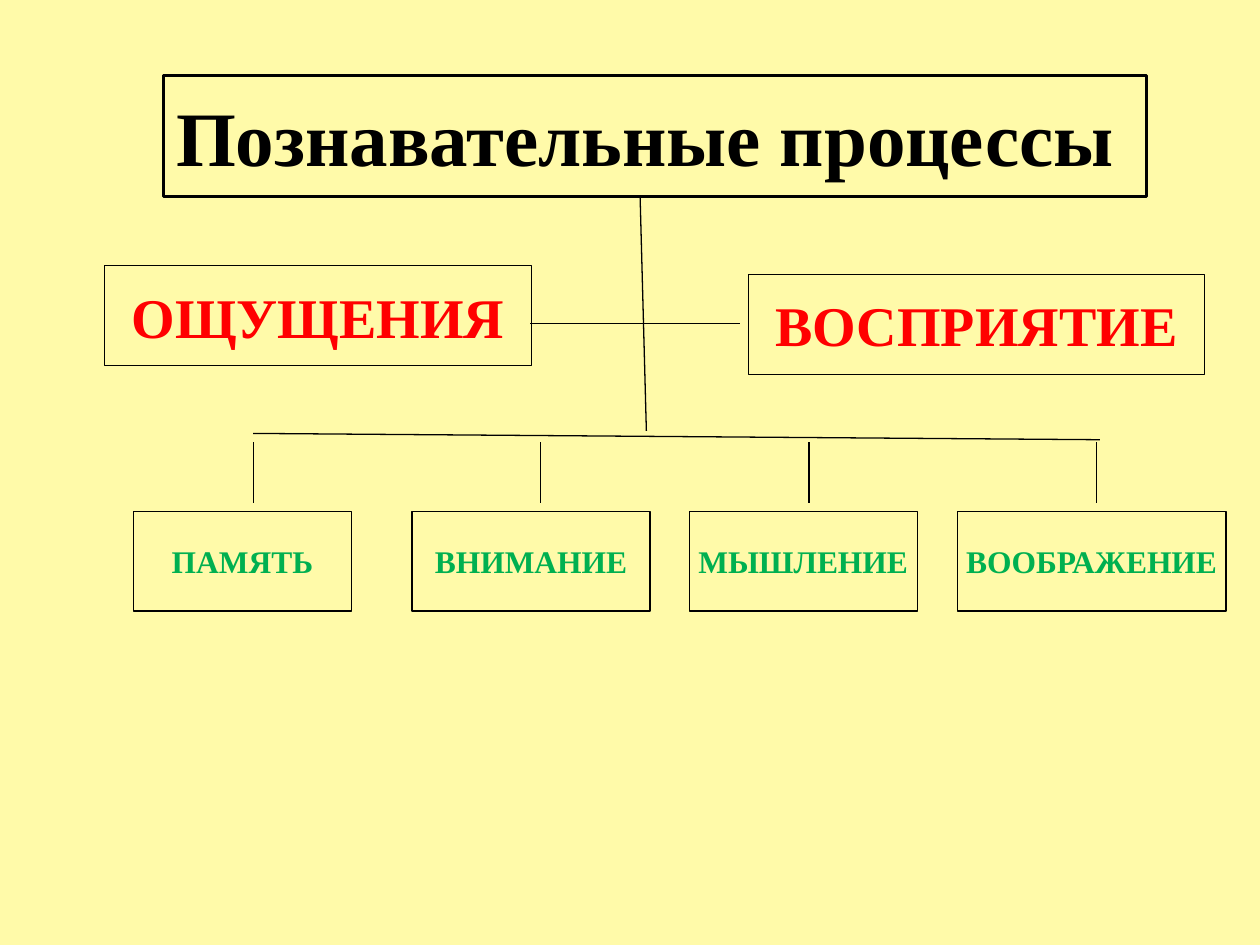
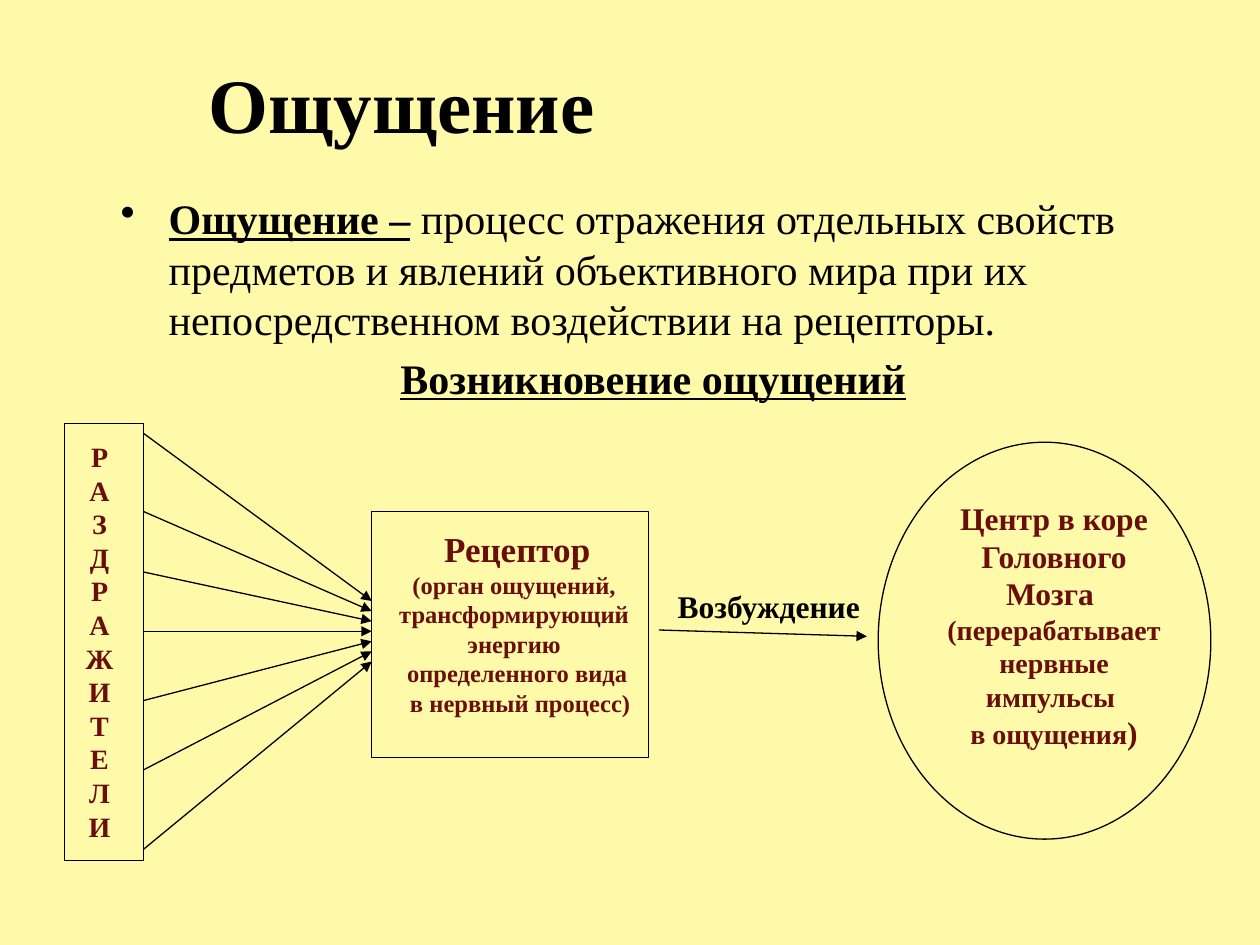
"""Builds two slides on cognitive processes and on how sensation arises."""
from lxml import etree
from pptx import Presentation
from pptx.dml.color import RGBColor
from pptx.enum.shapes import MSO_CONNECTOR, MSO_SHAPE
from pptx.enum.text import MSO_ANCHOR, PP_ALIGN
from pptx.oxml.ns import qn
from pptx.util import Inches, Pt

RECT, OVAL = MSO_SHAPE.RECTANGLE, MSO_SHAPE.OVAL
STRAIGHT = MSO_CONNECTOR.STRAIGHT
TOP, MIDDLE = MSO_ANCHOR.TOP, MSO_ANCHOR.MIDDLE
LEFT, CENTER = PP_ALIGN.LEFT, PP_ALIGN.CENTER

CREAM = RGBColor(0xFF, 0xFA, 0xA9)
BLACK = RGBColor(0, 0, 0)
RED = RGBColor(0xFF, 0, 0)
GREEN = RGBColor(0, 0xB0, 0x50)
MAROON = RGBColor(0x6A, 0x0E, 0x0C)
FONT = "Times New Roman"
THIN = 0.75
TITLE_SIZE = 44

OVERVIEW = "Познавательные процессы"
BOX_H = 0.79
SENSING = [("ОЩУЩЕНИЯ", 0.83, 2.11, 3.39), ("ВОСПРИЯТИЕ", 5.94, 2.18, 3.62)]
BRANCH_Y, STEM_Y, STEM_H = 4.06, 3.51, 0.48
BRANCHES = [
    ("ПАМЯТЬ", 1.06, 1.73, 2.01),
    ("ВНИМАНИЕ", 3.27, 1.89, 4.29),
    ("МЫШЛЕНИЕ", 5.47, 1.81, 6.42),
    ("ВООБРАЖЕНИЕ", 7.6, 2.13, 8.7),
]
TREE_LINES = [
    ((2.01, 3.44), (8.73, 3.49)),
    ((5.08, 1.55), (5.13, 3.42)),
    ((4.21, 2.57), (5.87, 2.57)),
]

SENSATION = "Ощущение"
TERM = "Ощущение –"
DEFINITION = (" процесс отражения отдельных свойств предметов и явлений "
              "объективного мира при их непосредственном воздействии на рецепторы.")
ORIGIN = "Возникновение ощущений"
STIMULI = "РАЗДРАЖИТЕЛИ"
STIMULUS_YS = [3.44, 4.06, 4.54, 5.01, 5.56, 6.11, 6.74]
STIMULUS_X, RECEPTOR_X = 1.14, 2.95
RECEPTOR_Y, RECEPTOR_STEP = 4.77, 0.08
RECEPTOR = [
    [("Рецептор", 20)],
    [("(орган ощущений, ", 14)],
    [("трансформирующий ", 14)],
    [("энергию ", 14)],
    [("определенного вида", 14)],
    [(" в нервный процесс)", 14)],
]
EXCITATION = "Возбуждение"
CORTEX = [
    [("Центр в коре", 18)],
    [("Головного", 18)],
    [("Мозга ", 18)],
    [("(перерабатывает", 16)],
    [("нервные", 16)],
    [("импульсы ", 16)],
    [("в ощущения", 16), (")", 18)],
]


def add_run(p, text, size, color=BLACK, bold=True, underline=False):
    r = p.add_run()
    r.text = text
    r.font.name, r.font.size = FONT, Pt(size)
    r.font.bold, r.font.underline = bold, underline
    r.font.color.rgb = color


def write(sp, paragraphs, color=BLACK, align=CENTER, anchor=TOP, wrap=True):
    tf = sp.text_frame
    tf.word_wrap, tf.vertical_anchor = wrap, anchor
    for i, runs in enumerate(paragraphs):
        p = tf.add_paragraph() if i else tf.paragraphs[0]
        p.alignment = align
        for text, size in runs:
            add_run(p, text, size, color)


def add_text(s, box, paragraphs, **style):
    write(s.shapes.add_textbox(*map(Inches, box)), paragraphs, **style)


def add_box(s, box, shape=RECT, line=THIN):
    sp = s.shapes.add_shape(shape, *map(Inches, box))
    sp.shadow.inherit = False
    sp.fill.solid()
    sp.fill.fore_color.rgb = CREAM
    if line:
        sp.line.color.rgb, sp.line.width = BLACK, Pt(line)
    else:
        sp.line.fill.background()
    return sp


def add_line(s, start, end, arrow=False):
    c = s.shapes.add_connector(STRAIGHT, *map(Inches, start + end))
    c.line.color.rgb, c.line.width = BLACK, Pt(THIN)
    if arrow:
        etree.SubElement(c.line._get_or_add_ln(), qn("a:tailEnd"), type="triangle")
    etree.SubElement(c._element.spPr, qn("a:effectLst"))


def add_definition(s, box):
    tf = s.shapes.add_textbox(*map(Inches, box)).text_frame
    tf.word_wrap = True
    p = tf.paragraphs[0]
    pPr = p._p.get_or_add_pPr()
    pPr.set("marL", str(Inches(0.38)))
    pPr.set("indent", str(-Inches(0.38)))
    etree.SubElement(pPr, qn("a:buChar"), char="•")
    add_run(p, TERM, 24, underline=True)
    add_run(p, DEFINITION, 24, bold=False)
    p = tf.add_paragraph()
    p.alignment, p.space_before = CENTER, Pt(4.8)
    add_run(p, ORIGIN, 24, underline=True)


def build_overview(s):
    title = add_box(s, (1.3, 0.6, 7.8, 0.96), line=1.5)
    write(title, [[(OVERVIEW, TITLE_SIZE)]], align=LEFT, anchor=MIDDLE)
    label = {"anchor": MIDDLE, "wrap": False}
    for name, x, y, w in SENSING:
        write(add_box(s, (x, y, w, BOX_H)), [[(name, 32)]], RED, **label)
    for name, x, w, stem_x in BRANCHES:
        write(add_box(s, (x, BRANCH_Y, w, BOX_H)), [[(name, 18)]], GREEN, **label)
        add_line(s, (stem_x, STEM_Y), (stem_x, STEM_Y + STEM_H))
    for start, end in TREE_LINES:
        add_line(s, start, end)


def build_sensation(s):
    add_text(s, (1.56, 0.23, 7.42, 1.17), [[(SENSATION, TITLE_SIZE)]],
             align=LEFT, anchor=MIDDLE)
    add_definition(s, (0.86, 1.48, 8.65, 5.25))
    add_box(s, (0.51, 3.36, 0.63, 3.47))
    add_box(s, (RECEPTOR_X, 4.06, 2.2, 1.95))
    add_box(s, (6.97, 3.51, 2.64, 3.15), OVAL)
    for i, y in enumerate(STIMULUS_YS):
        target = (RECEPTOR_X, RECEPTOR_Y + i * RECEPTOR_STEP)
        add_line(s, (STIMULUS_X, y), target, arrow=True)
    add_line(s, (5.23, 5), (6.88, 5.05), arrow=True)
    letters = add_box(s, (0.58, 3.44, 0.42, 3.36), line=0)
    write(letters, [[(letter, 16)] for letter in STIMULI], MAROON)
    add_text(s, (3.05, 4.14, 2.11, 1.62), RECEPTOR, color=MAROON)
    add_text(s, (5.28, 4.61, 1.68, 0.4), [[(EXCITATION, 18)]], align=LEFT)
    add_text(s, (7.27, 3.91, 2.19, 2.12), CORTEX, color=MAROON)


def main():
    prs = Presentation()
    prs.slide_width, prs.slide_height = Inches(10), Inches(7.5)
    background = prs.slide_master.background.fill
    background.solid()
    background.fore_color.rgb = CREAM
    for build in (build_overview, build_sensation):
        build(prs.slides.add_slide(prs.slide_layouts[6]))
    prs.save("out.pptx")


if __name__ == "__main__":
    main()
